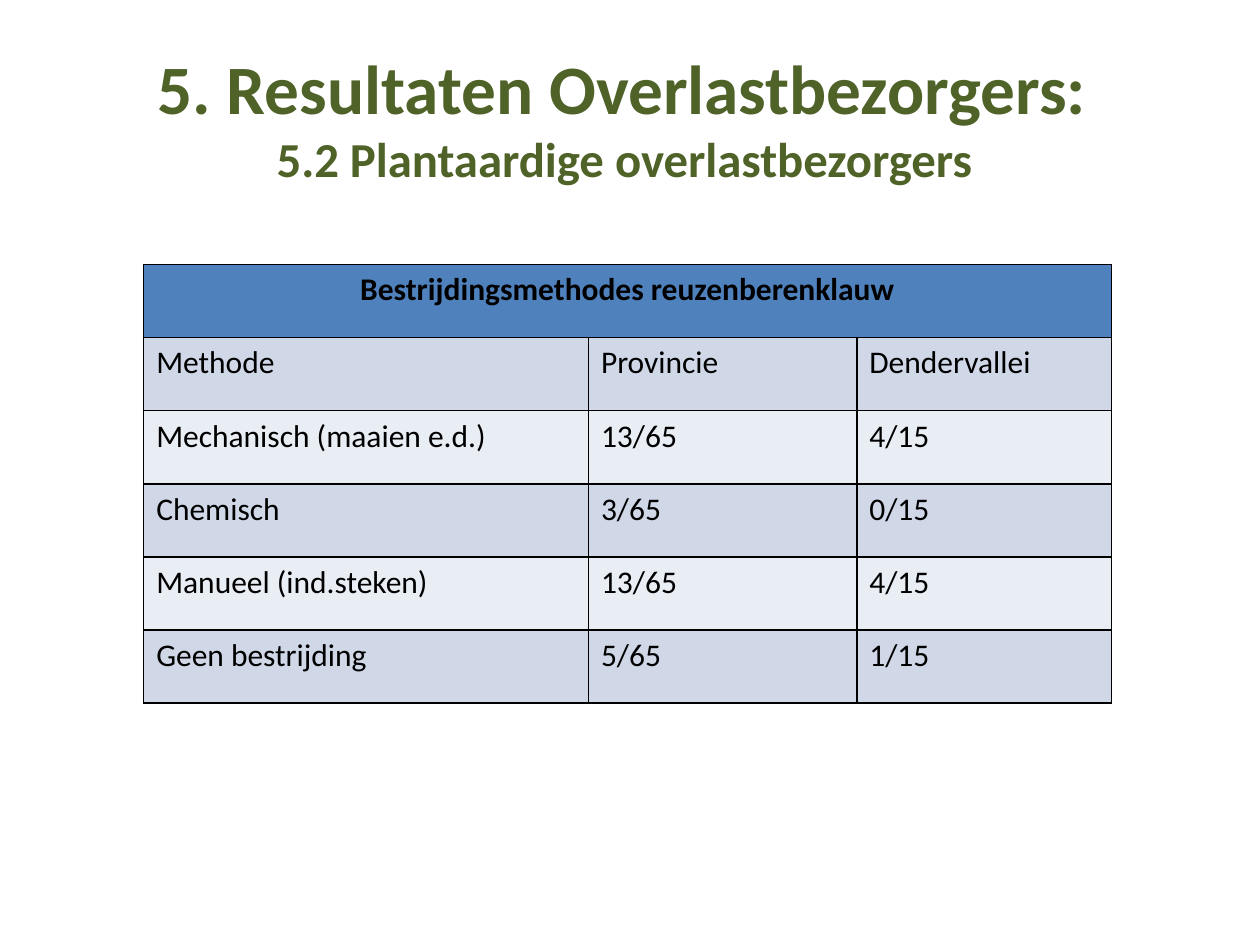
from lxml.etree import SubElement
from pptx import Presentation
from pptx.dml.color import RGBColor
from pptx.enum.text import MSO_ANCHOR, MSO_AUTO_SIZE, PP_ALIGN
from pptx.oxml.ns import qn
from pptx.util import Inches, Pt

COLORS = {"title": "4F6228", "text": "000000", "border": "000000",
          "header": "4F81BD", "odd": "D0D8E8", "even": "E9EDF4"}
ROWS = [
    ("Bestrijdingsmethodes reuzenberenklauw", "", ""),
    ("Methode", "Provincie", "Dendervallei"),
    ("Mechanisch (maaien e.d.)", "13/65", "4/15"),
    ("Chemisch", "3/65", "0/15"),
    ("Manueel (ind.steken)", "13/65", "4/15"),
    ("Geen bestrijding", "5/65", "1/15"),
]
COL_WIDTHS = [3.53, 2.13, 2.02]
ROW_HEIGHT = 0.58


def style_run(r, size, color, bold):
    r.font.name = "Calibri"
    r.font.size = Pt(size)
    r.font.bold = bold
    r.font.color.rgb = RGBColor.from_string(color)


def add_borders(cell):
    tcPr = cell._tc.get_or_add_tcPr()
    for i, side in enumerate(("lnL", "lnR", "lnT", "lnB")):
        ln = tcPr.makeelement(qn(f"a:{side}"), {"w": str(Pt(1))})
        fill = SubElement(ln, qn("a:solidFill"))
        SubElement(fill, qn("a:srgbClr"), val=COLORS["border"])
        tcPr.insert(i, ln)


prs = Presentation()
prs.slide_width, prs.slide_height = Inches(10), Inches(7.5)
s = prs.slides.add_slide(prs.slide_layouts[5])

title = s.shapes.title
title.left, title.top = Inches(0.5), Inches(0.3)
title.width, title.height = Inches(9), Inches(1.25)
tf = title.text_frame
tf.text = "5. Resultaten Overlastbezorgers: \v5.2 Plantaardige overlastbezorgers "
tf.word_wrap = True
tf.auto_size = MSO_AUTO_SIZE.NONE
tf.vertical_anchor = MSO_ANCHOR.MIDDLE
p = tf.paragraphs[0]
p.alignment = PP_ALIGN.CENTER
for r, size in zip(p.runs, (39.6, 27.9)):
    style_run(r, size, COLORS["title"], True)

table = s.shapes.add_table(
    len(ROWS), len(COL_WIDTHS), Inches(1.14), Inches(2.1),
    Inches(sum(COL_WIDTHS)), Inches(ROW_HEIGHT * len(ROWS))).table
for col, width in zip(table.columns, COL_WIDTHS):
    col.width = Inches(width)
table.cell(0, 0).merge(table.cell(0, 2))

for i, values in enumerate(ROWS):
    table.rows[i].height = Inches(ROW_HEIGHT)
    color = "header" if i == 0 else "odd" if i % 2 else "even"
    for j, value in enumerate(values):
        cell = table.cell(i, j)
        cell.fill.solid()
        cell.fill.fore_color.rgb = RGBColor.from_string(COLORS[color])
        add_borders(cell)
        if value:
            cell.text_frame.text = value
            p = cell.text_frame.paragraphs[0]
            p.alignment = PP_ALIGN.CENTER if i == 0 else PP_ALIGN.LEFT
            style_run(p.runs[0], 18, COLORS["text"], i == 0)

prs.save("out.pptx")
